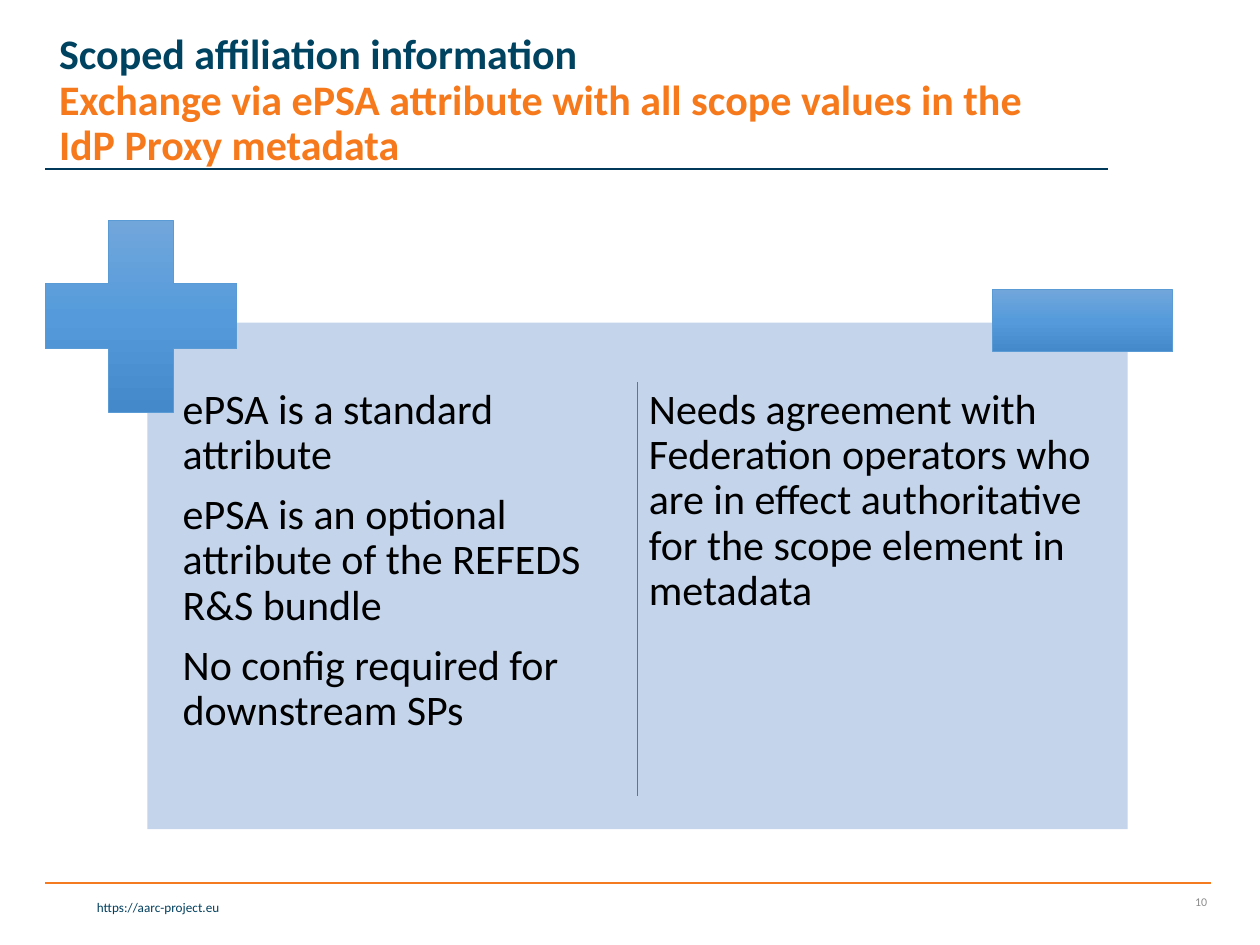
from copy import deepcopy
from dataclasses import dataclass

from pptx import Presentation
from pptx.dml.color import RGBColor
from pptx.enum.shapes import MSO_CONNECTOR, MSO_SHAPE
from pptx.enum.text import MSO_ANCHOR, PP_ALIGN
from pptx.oxml.ns import qn
from pptx.util import Inches, Pt
from lxml.etree import SubElement


@dataclass(frozen=True)
class Theme:
    font: str = "Calibri"
    heading: str = "004361"
    accent: str = "F6791C"
    header_rule: str = "003959"
    footer_rule: str = "F57B20"
    footer_text: str = "003F5E"
    page_number: str = "8C8C8C"
    panel: str = "C4D5EB"
    body: str = "000000"
    divider: str = "497CAB"
    sign_line: str = "5B9BD5"
    sign_gradient: tuple = ("71A6DB", "559BDB", "448ACA")
    large: float = 24
    address: float = 7.5
    small: float = 6.8


THEME = Theme()


def rgb(value):
    return RGBColor.from_string(value)


def add_rule(page, start, end, color, width):
    points = [Inches(value) for value in (*start, *end)]
    rule = page.shapes.add_connector(MSO_CONNECTOR.STRAIGHT, *points)
    rule.line.color.rgb = rgb(color)
    rule.line.width = Pt(width)
    SubElement(rule._element.spPr, qn("a:effectLst"))


def add_text_box(page, box, inset=None, anchor=MSO_ANCHOR.TOP, wrap=True):
    frame = page.shapes.add_textbox(*map(Inches, box)).text_frame
    frame.word_wrap = wrap
    frame.vertical_anchor = anchor
    if inset is not None:
        frame.margin_left = frame.margin_right = Inches(inset)
        frame.margin_top = frame.margin_bottom = Inches(inset)
    return frame


def add_span(para, text, size, color, bold=False):
    span = para.add_run()
    span.text = text
    span.font.name = THEME.font
    span.font.size = Pt(size)
    span.font.bold = bold
    span.font.color.rgb = rgb(color)


def add_title(page, box, heading, subheading):
    para = add_text_box(page, box, anchor=MSO_ANCHOR.MIDDLE).paragraphs[0]
    para.line_spacing = 0.9
    add_span(para, heading, THEME.large, THEME.heading, bold=True)
    para.add_line_break()
    add_span(para, subheading, THEME.large, THEME.accent, bold=True)


def add_shape(page, kind, box):
    shape = page.shapes.add_shape(kind, *map(Inches, box))
    shape.shadow.inherit = False
    return shape


def add_sign(page, kind, box):
    """Draw a plus or minus with a three-stop vertical gradient."""
    sign = add_shape(page, kind, box)
    sign.fill.gradient()
    sign.fill.gradient_angle = 270
    stop_list = sign._element.spPr.find(qn("a:gradFill")).find(qn("a:gsLst"))
    stop_list.insert(1, deepcopy(stop_list[0]))
    for index, color in enumerate(THEME.sign_gradient):
        stop = sign.fill.gradient_stops[index]
        stop.color.rgb = rgb(color)
        stop.position = index / 2
    sign.line.color.rgb = rgb(THEME.sign_line)
    sign.line.width = Pt(0.5)
    return sign


def add_points(page, box, points):
    frame = add_text_box(page, box, inset=0.05)
    for index, point in enumerate(points):
        para = frame.add_paragraph() if index else frame.paragraphs[0]
        para.line_spacing = 0.9
        para.space_after = Pt(0.35 * THEME.large)
        add_span(para, point, THEME.large, THEME.body)


def add_comparison(page, box, advantages, drawbacks):
    left, top, width, height = box
    panel = add_shape(page, MSO_SHAPE.RECTANGLE, box)
    panel.fill.solid()
    panel.fill.fore_color.rgb = rgb(THEME.panel)
    panel.line.fill.background()

    text_top = top + 0.47
    for offset, points in ((0.23, advantages), (3.93, drawbacks)):
        add_points(page, (left + offset, text_top, 3.61, 3.44), points)

    plus = add_sign(page, MSO_SHAPE.CROSS, (left - 0.81, top - 0.81, 1.52, 1.52))
    plus.adjustments[0] = 0.33
    add_sign(page, MSO_SHAPE.RECTANGLE, (left + width - 1.07, top - 0.26, 1.43, 0.49))

    middle = left + width / 2
    add_rule(page, (middle, text_top), (middle, top + height - 0.26), THEME.divider, 0.5)


def add_footer(page, box, address, number):
    left, top, width, height = box
    right = left + width
    add_rule(page, (left, top), (right, top), THEME.footer_rule, 1)
    address_frame = add_text_box(page, (left, top + 0.08, 1.48, 0.23), wrap=False)
    number_frame = add_text_box(
        page, (right - 0.54, top, 0.61, height), anchor=MSO_ANCHOR.MIDDLE
    )
    for frame, text, size, color in (
        (address_frame, address, THEME.address, THEME.footer_text),
        (number_frame, number, THEME.small, THEME.page_number),
    ):
        para = frame.paragraphs[0]
        para.alignment = PP_ALIGN.RIGHT
        add_span(para, text, size, color)


def main():
    deck = Presentation()
    deck.slide_width, deck.slide_height = Inches(10), Inches(7.5)
    page = deck.slides.add_slide(deck.slide_layouts[6])

    add_footer(page, (0.36, 7.01, 9.25, 0.3), "https://aarc-project.eu", "10")
    add_rule(page, (0.36, 1.34), (8.79, 1.34), THEME.header_rule, 1)
    add_title(
        page,
        (0.37, 0.08, 7.88, 1.45),
        "Scoped affiliation information",
        "Exchange via ePSA attribute with all scope values in the IdP Proxy metadata",
    )
    add_comparison(
        page,
        (1.17, 2.56, 7.78, 4.02),
        advantages=[
            "ePSA is a standard attribute",
            "ePSA is an optional attribute of the REFEDS R&S bundle",
            "No config required for downstream SPs",
        ],
        drawbacks=[
            "Needs agreement with Federation operators who are in effect "
            "authoritative for the scope element in metadata",
        ],
    )
    deck.save("out.pptx")


if __name__ == "__main__":
    main()
